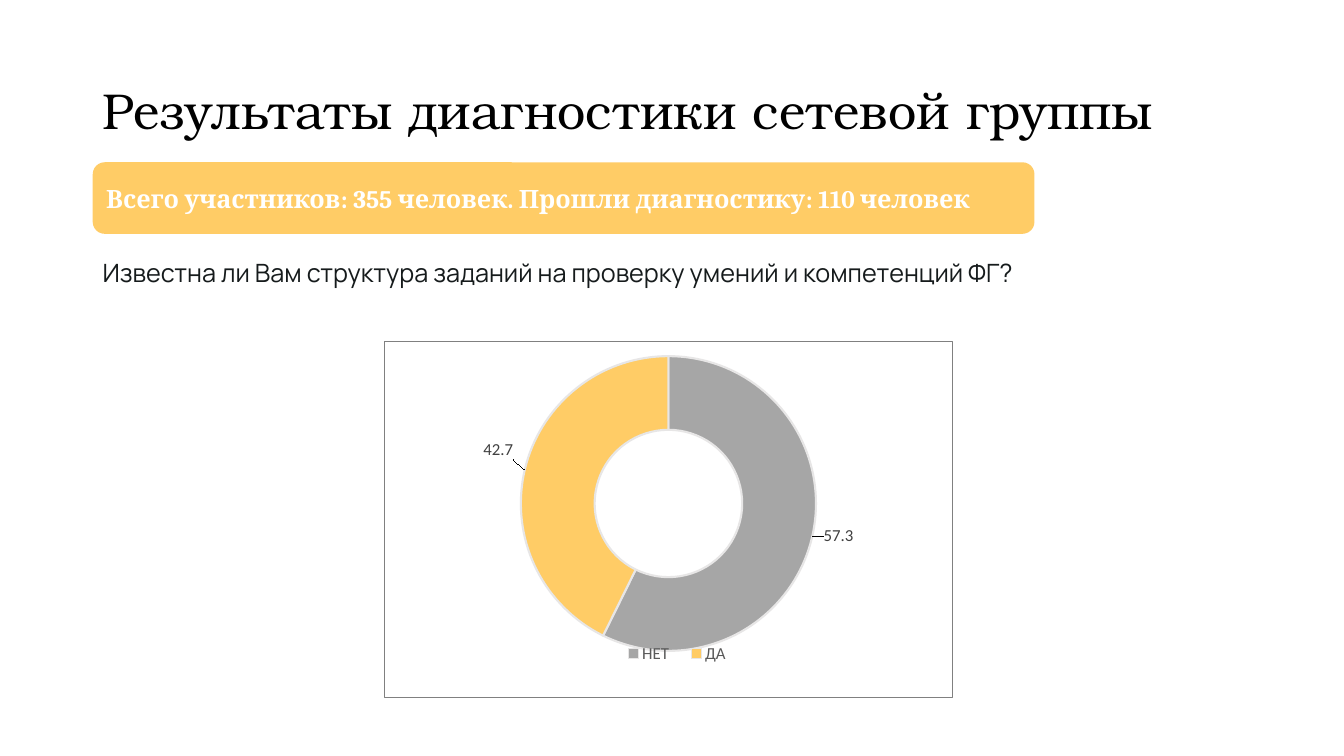
from lxml.etree import fromstring
from pptx import Presentation
from pptx.chart.data import CategoryChartData
from pptx.dml.color import RGBColor
from pptx.enum.chart import XL_CHART_TYPE as CT, XL_LEGEND_POSITION as LP
from pptx.enum.shapes import MSO_SHAPE as SHAPE
from pptx.enum.text import MSO_ANCHOR as ANCHOR, PP_ALIGN as ALIGN
from pptx.oxml.ns import nsdecls
from pptx.util import Inches, Pt

COLORS = {"black": "000000", "white": "FFFFFF", "amber": "FFCC66",
          "ink": "161B1C", "gray": "A6A6A6", "border": "808080",
          "label": "404040", "legend": "595959", "edge": "E7E6E6"}


def rgb(name):
    return RGBColor.from_string(COLORS[name])


def set_font(font, name, size, color, bold=None):
    font.name, font.size, font.bold = name, Pt(size), bold
    font.color.rgb = rgb(color)


def set_layout(parent, index, target="", **places):
    """Give a chart part a manual layout, in fractions of the chart."""
    for old in parent.xpath("c:layout"):
        parent.remove(old)
    inner = f'<c:layoutTarget val="{target}"/>' if target else ""
    if target or "w" in places:
        inner += '<c:xMode val="edge"/><c:yMode val="edge"/>'
    inner += "".join(f'<c:{k} val="{v}"/>' for k, v in places.items())
    parent.insert(index, fromstring(
        f'<c:layout {nsdecls("c")}><c:manualLayout>{inner}'
        '</c:manualLayout></c:layout>'))


class SlideBuilder:
    def __init__(self, prs):
        self.slide = prs.slides.add_slide(prs.slide_layouts[6])

    def fill_text(self, tf, text, font, size, color, bold=None, anchor=ANCHOR.TOP):
        tf.word_wrap = True
        tf.vertical_anchor = anchor
        p = tf.paragraphs[0]
        p.text, p.alignment = text, ALIGN.LEFT
        set_font(p.font, font, size, color, bold)
        return p

    def text(self, box, *args, **kwargs):
        s = self.slide.shapes.add_textbox(*map(Inches, box))
        return self.fill_text(s.text_frame, *args, **kwargs)

    def banner(self, box, fill, *args, **kwargs):
        s = self.slide.shapes.add_shape(SHAPE.ROUNDED_RECTANGLE, *map(Inches, box))
        s.shadow.inherit = False
        s.fill.solid()
        s.fill.fore_color.rgb = rgb(fill)
        s.line.fill.background()
        return self.fill_text(s.text_frame, *args, **kwargs)

    def doughnut(self, box, answers):
        data = CategoryChartData()
        data.categories = [name for name, *_ in answers]
        data.add_series("Series 1", [value for _, value, *_ in answers])
        chart = self.slide.shapes.add_chart(
            CT.DOUGHNUT, *map(Inches, box), data).chart
        chart.has_title = False
        set_font(chart.font, "Calibri", 10, "black")
        root = chart.element
        root.xpath(".//c:holeSize")[0].set("val", "75")
        set_layout(root.xpath(".//c:plotArea")[0], 0, "inner",
                   x=0.24, y=0.04, w=0.52, h=0.83)

        # Frame
        root.xpath("c:chart")[0].addnext(fromstring(
            f'<c:spPr {nsdecls("c", "a")}><a:noFill/><a:ln w="9525"><a:solidFill>'
            f'<a:srgbClr val="{COLORS["border"]}"/></a:solidFill></a:ln></c:spPr>'))

        # Legend
        chart.has_legend = True
        chart.legend.position = LP.BOTTOM
        chart.legend.include_in_layout = False
        set_font(chart.legend.font, "Calibri", 12, "legend")
        set_layout(root.xpath(".//c:legend")[0], 1, x=0.4, y=0.83, w=0.23, h=0.09)

        # Rings and their values
        series = chart.plots[0].series[0]
        labels = series.data_labels
        labels.show_value = True
        set_font(labels.font, "Calibri", 12, "label")
        for i, (_, _, color, dx, dy) in enumerate(answers):
            point = series.points[i]
            point.format.fill.solid()
            point.format.fill.fore_color.rgb = rgb(color)
            point.format.line.color.rgb = rgb("edge")
            point.format.line.width = Pt(1.5)
            set_font(point.data_label.font, "Calibri", 12, "label")
            set_layout(root.xpath(".//c:ser/c:dLbls/c:dLbl")[i], 1, x=dx, y=dy)


def main():
    prs = Presentation()
    prs.slide_width, prs.slide_height = Inches(13.33), Inches(7.5)
    b = SlideBuilder(prs)

    # Heading
    title = b.text((0.92, 0.4, 11.5, 1.45), "Результаты диагностики сетевой группы",
                   "TeX Gyre Bonum", 36, "black", anchor=ANCHOR.MIDDLE)
    title.line_spacing = 0.9
    b.banner((0.92, 1.61, 9.34, 0.71), "amber",
             "Всего участников: 355 человек. Прошли диагностику: 110 человек",
             "Cambria", 18, "white", bold=True, anchor=ANCHOR.MIDDLE)

    # Question and answers
    b.text((0.92, 2.5, 11.76, 0.4),
           "Известна ли Вам структура заданий на проверку умений и компетенций ФГ?",
           "Manrope", 18, "ink")
    b.doughnut((3.81, 3.38, 5.64, 3.55),
               [("НЕТ", 57.3, "gray", 0.11, 0.02),
                ("ДА", 42.7, "amber", -0.11, -0.08)])
    prs.save("out.pptx")


if __name__ == "__main__":
    main()
